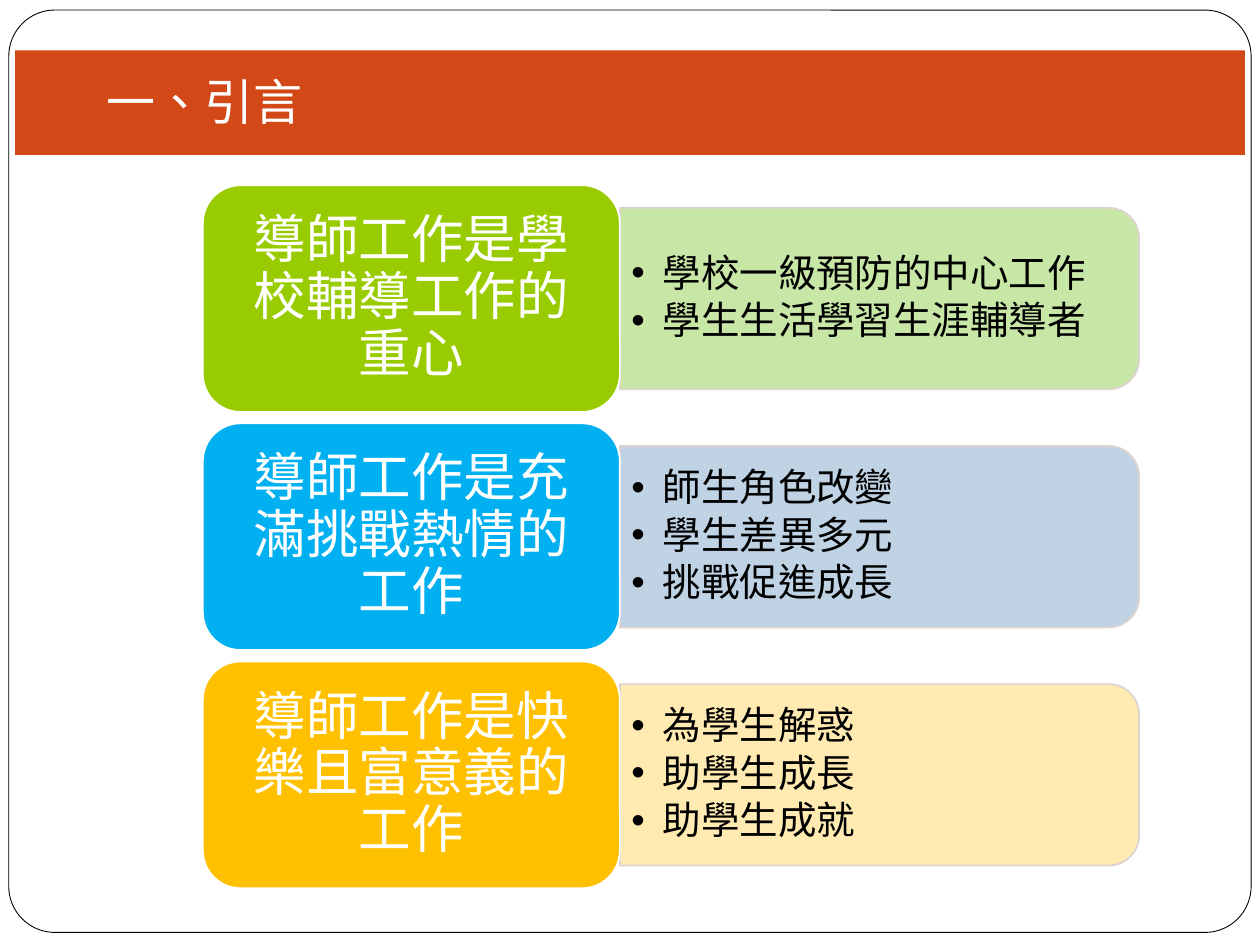
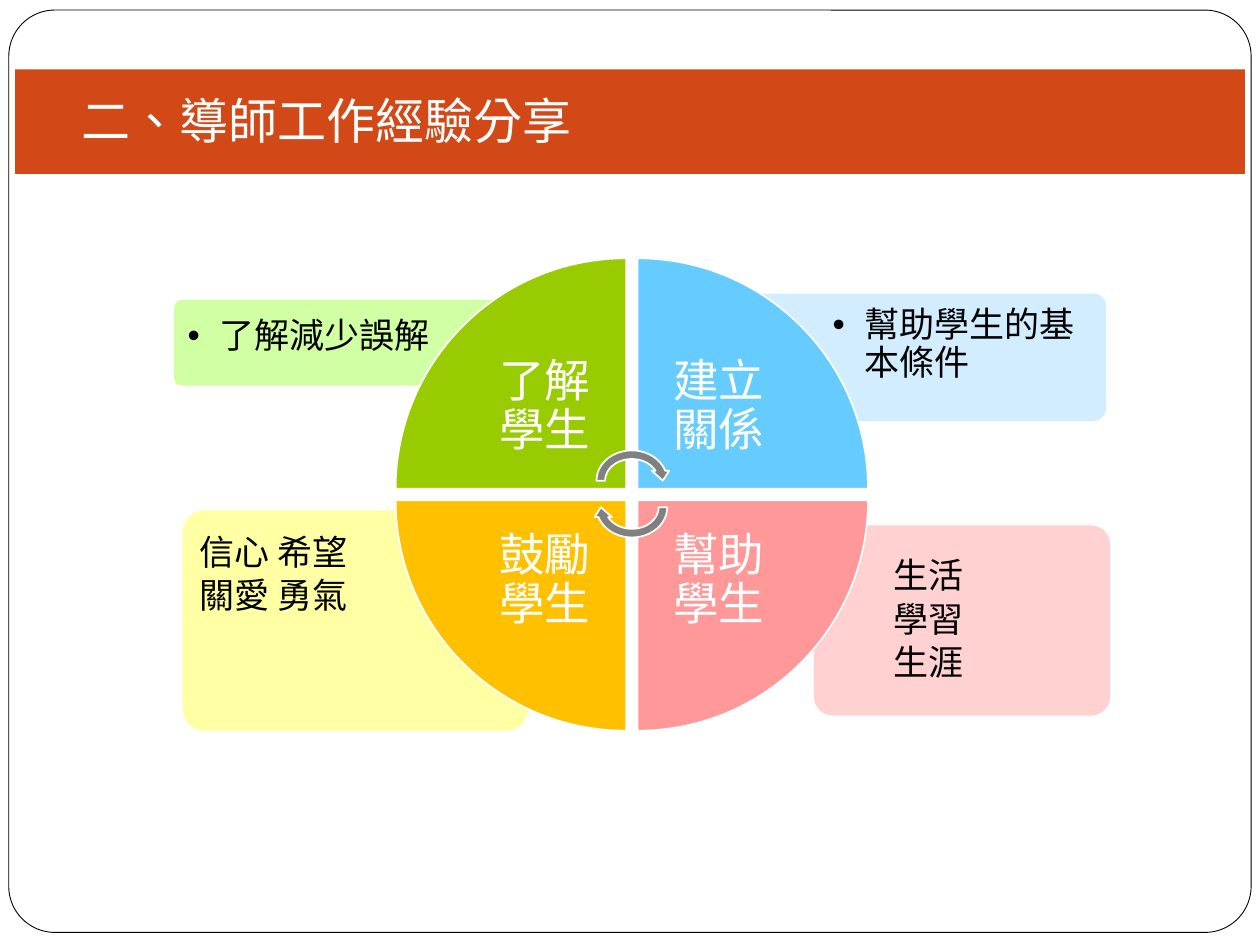
from lxml import etree
from pptx import Presentation
from pptx.dml.color import RGBColor
from pptx.enum import shapes, text
from pptx.oxml import ns
from pptx.util import Inches, Pt

FONT = "Noto Sans CJK JP"
WHITE = RGBColor(0xFF, 0xFF, 0xFF)
BLACK = RGBColor(0x00, 0x00, 0x00)
BAND = RGBColor(0xD3, 0x48, 0x17)
GRAY = RGBColor(0x80, 0x80, 0x80)
GREEN = RGBColor(0x99, 0xCC, 0x00)
BLUE = RGBColor(0x00, 0xB0, 0xF0)
AMBER = RGBColor(0xFF, 0xC0, 0x00)
SKY = RGBColor(0x66, 0xCC, 0xFF)
ROSE = RGBColor(0xFF, 0x99, 0x99)
LEAF = RGBColor(0x92, 0xD0, 0x50)
STEEL = RGBColor(0xBF, 0xD3, 0xE4)
PANEL_EDGE = RGBColor(0xDD, 0xD3, 0xD0)
PALE_GREEN = RGBColor(0xCC, 0xFF, 0x99)
PALE_BLUE = RGBColor(0xCC, 0xEC, 0xFF)
PALE_YELLOW = RGBColor(0xFF, 0xFF, 0x99)
PALE_PINK = RGBColor(0xFF, 0xCC, 0xCC)

KIND = shapes.MSO_SHAPE
MIDDLE = text.MSO_ANCHOR.MIDDLE
TOP = text.MSO_ANCHOR.TOP
LEFT = text.PP_ALIGN.LEFT
CENTER = text.PP_ALIGN.CENTER


# Basic elements
def paint(shape, fill, line=None, width=1, opacity=100):
    shape.shadow.inherit = False
    shape.fill.solid()
    shape.fill.fore_color.rgb = fill
    if opacity < 100:
        color = shape.fill._xPr.find(".//" + ns.qn("a:srgbClr"))
        etree.SubElement(color, ns.qn("a:alpha"), val=str(opacity * 1000))
    if line is None:
        shape.line.fill.background()
    else:
        shape.line.color.rgb = line
        shape.line.width = Pt(width)


def add_block(page, kind, area, fill, line=None, width=1, opacity=100):
    block = page.shapes.add_shape(kind, *map(Inches, area))
    paint(block, fill, line, width, opacity)
    return block


def add_bullet(props, defaults):
    props.set("marL", str(Inches(0.25)))
    props.set("indent", str(-Inches(0.25)))
    defaults.addprevious(etree.Element(ns.qn("a:buFont"), typeface="Arial"))
    defaults.addprevious(etree.Element(ns.qn("a:buChar"), char="•"))


def write(shape, lines, size, color, insets, align=LEFT, anchor=TOP,
          bullet=False, after=0.15, spacing=0.9, wrap=True):
    frame = shape.text_frame
    frame.word_wrap = wrap
    frame.vertical_anchor = anchor
    (frame.margin_left, frame.margin_top,
     frame.margin_right, frame.margin_bottom) = map(Inches, insets)
    frame.text = "\n".join(lines)
    for para in frame.paragraphs:
        para.alignment = align
        para.line_spacing = spacing
        para.space_after = Pt(size * after)
        para.font.name = FONT
        para.font.size = Pt(size)
        para.font.color.rgb = color
        props = para._p.get_or_add_pPr()
        defaults = props.find(ns.qn("a:defRPr"))
        defaults.set("lang", "zh-TW")
        etree.SubElement(defaults, ns.qn("a:ea"), typeface=FONT)
        if bullet:
            add_bullet(props, defaults)


# Shared page parts
def add_page(deck):
    page = deck.slides.add_slide(deck.slide_layouts[6])
    border = add_block(page, KIND.ROUNDED_RECTANGLE, (0.07, 0.08, 9.86, 7.32),
                       WHITE, BLACK, 0.5)
    border.adjustments[0] = 0.05
    return page


def add_title(page, title, left, top, width):
    add_block(page, KIND.RECTANGLE, (0.12, top, 9.76, 0.83), BAND)
    box = page.shapes.add_textbox(Inches(left), Inches(top + 0.12),
                                  Inches(width), Inches(0.57))
    write(box, [title], 28, WHITE, (0.1, 0.05, 0.1, 0.05),
          after=0, spacing=1, wrap=False)


# Introduction: a topic block with a detail panel on its right
def add_topic_row(page, top, topic, color, details, tint, opacity):
    width, height = 4.12, 1.44
    left, middle = 4.92, top + 0.9
    panel = add_block(
        page, KIND.ROUND_2_SAME_RECTANGLE,
        (left + (width - height) / 2, middle - width / 2, height, width),
        tint, PANEL_EDGE, opacity=opacity)
    panel.rotation = 90
    box = page.shapes.add_textbox(Inches(left), Inches(middle - 0.65),
                                  Inches(4.05), Inches(1.3))
    write(box, details, 22, BLACK, (0.09, 0.05, 0.09, 0.05),
          anchor=MIDDLE, bullet=True)
    block = add_block(page, KIND.ROUNDED_RECTANGLE, (1.61, top, 3.31, 1.8),
                      color, WHITE)
    write(block, [topic], 30, WHITE, (0.12, 0.06, 0.12, 0.06),
          CENTER, MIDDLE, after=0.35)


# Experience: cards around a wheel of four quadrants
def add_card(page, area, fill, lines, insets, bullet=False):
    card = add_block(page, KIND.ROUNDED_RECTANGLE, area, fill, opacity=90)
    card.adjustments[0] = 0.1
    write(card, lines, 20, BLACK, insets, bullet=bullet)


def round_first_side(wedge):
    """Turn the side facing the corner into a quarter circle."""
    outline = wedge._element.find(".//" + ns.qn("a:pathLst"))[0]
    start, end, corner = [
        (int(point.get("x")), int(point.get("y")))
        for point in outline.iter(ns.qn("a:pt"))][:3]
    pull = 0.5523
    controls = [
        [a + pull * (b - c) for a, b, c in zip(start, end, corner)],
        [b + pull * (a - c) for a, b, c in zip(start, end, corner)],
        end]
    curve = etree.Element(ns.qn("a:cubicBezTo"))
    for x, y in controls:
        etree.SubElement(curve, ns.qn("a:pt"), x=str(round(x)), y=str(round(y)))
    outline.replace(outline.find(ns.qn("a:lnTo")), curve)


def add_quadrant(page, label, color, side, level):
    """side and level are -1 or 1: left or right, upper or lower."""
    radius, gap = 1.83, 0.045
    x, y = 5.015 + side * gap, 3.925 + level * gap
    builder = page.shapes.build_freeform(Inches(x + side * radius), Inches(y))
    builder.add_line_segments([(Inches(x), Inches(y + level * radius)),
                               (Inches(x), Inches(y))], close=True)
    wedge = builder.convert_to_shape()
    round_first_side(wedge)
    paint(wedge, color, WHITE)
    near, far = 0.2, 0.74
    insets = (far if side < 0 else near, far if level < 0 else near,
              near if side < 0 else far, near if level < 0 else far)
    write(wedge, [label], 26, WHITE, insets, CENTER, MIDDLE, after=0.35)


def build_introduction(deck):
    page = add_page(deck)
    rows = [
        ("導師工作是學校輔導工作的重心", GREEN,
         ["學校一級預防的中心工作", "學生生活學習生涯輔導者"], LEAF, 50),
        ("導師工作是充滿挑戰熱情的工作", BLUE,
         ["師生角色改變", "學生差異多元", "挑戰促進成長"], STEEL, 100),
        ("導師工作是快樂且富意義的工作", AMBER,
         ["為學生解惑", "助學生成長", "助學生成就"], AMBER, 30),
    ]
    for index, row in enumerate(rows):
        add_topic_row(page, 1.47 + 1.89 * index, *row)
    add_title(page, "一、引言", 0.75, 0.4, 1.77)


def build_experience(deck):
    page = add_page(deck)
    add_card(page, (6.46, 4.17, 2.35, 1.51), PALE_PINK,
             ["生活", "學習", "生涯"], (0.59, 0.22, 0.1, 0))
    add_card(page, (1.45, 4.05, 2.74, 1.75), PALE_YELLOW,
             ["信心 希望", "關愛 勇氣"], (0.08, 0.15, 0.9, 0.08))
    add_card(page, (5.52, 2.33, 3.26, 1.01), PALE_BLUE,
             ["幫助學生的基本條件"], (1.06, 0.08, 0.08, 0.1), bullet=True)
    add_card(page, (1.38, 2.38, 3.32, 0.68), PALE_GREEN,
             ["了解減少誤解"], (0.09, 0.13, 1.09, 0.1), bullet=True)

    add_quadrant(page, "了解學生", GREEN, -1, -1)
    add_quadrant(page, "建立關係", SKY, 1, -1)
    add_quadrant(page, "幫助學生", ROSE, 1, 1)
    add_quadrant(page, "鼓勵學生", AMBER, -1, 1)

    for top, turn in ((3.54, 0), (3.75, 180)):
        arrow = add_block(page, KIND.CIRCULAR_ARROW, (4.7, top, 0.63, 0.55),
                          GRAY, WHITE)
        arrow.rotation = turn
    add_title(page, "二、導師工作經驗分享", 0.55, 0.55, 4.13)


def main():
    deck = Presentation()
    deck.slide_width, deck.slide_height = Inches(10), Inches(7.5)
    build_introduction(deck)
    build_experience(deck)
    deck.save("out.pptx")


if __name__ == "__main__":
    main()
